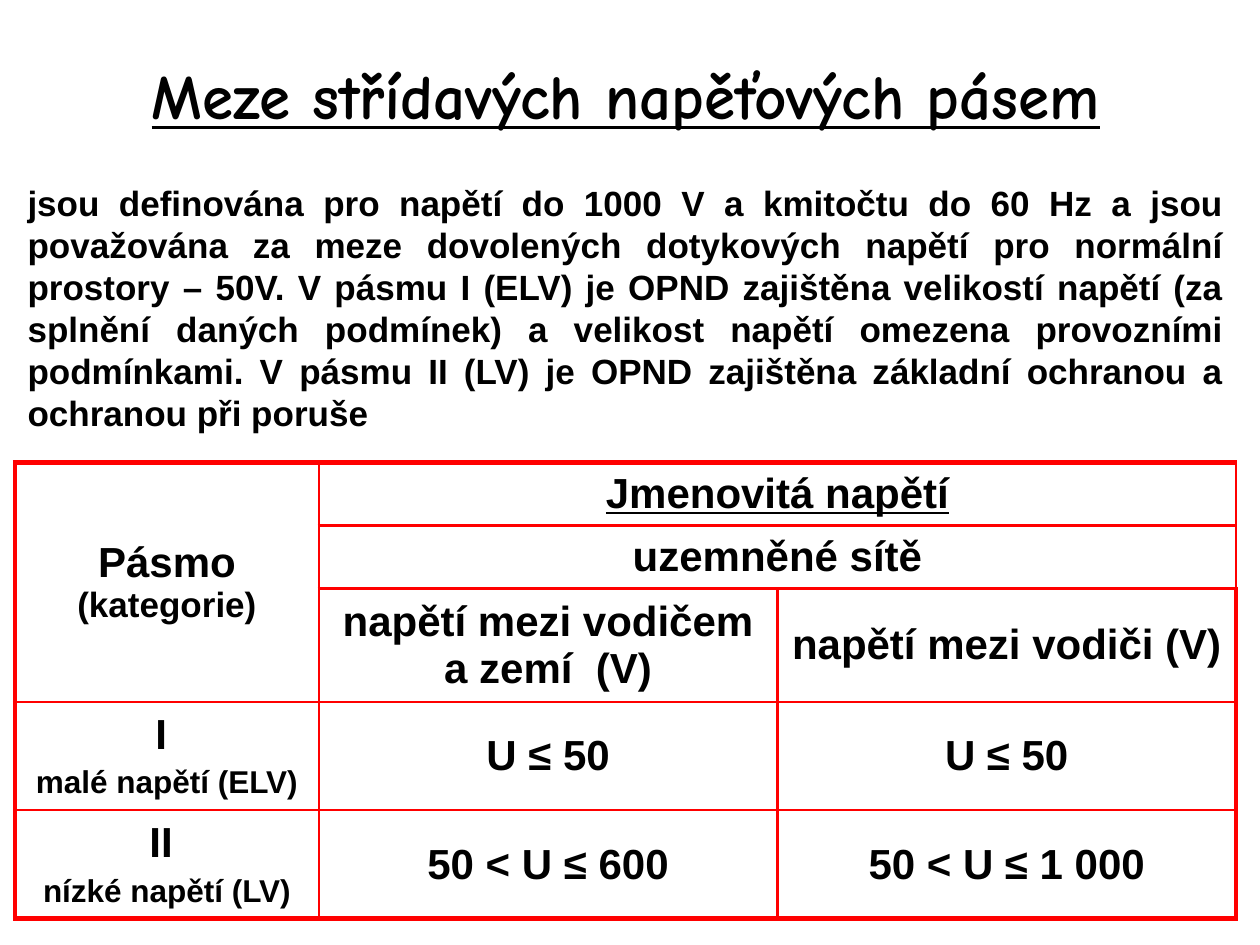
import pptx
import pptx.util
import pptx.dml.color
import pptx.enum.text
import pptx.oxml
import pptx.oxml.ns

Inches, Pt = pptx.util.Inches, pptx.util.Pt
RGBColor = pptx.dml.color.RGBColor
ALIGN = pptx.enum.text.PP_ALIGN
ANCHOR = pptx.enum.text.MSO_ANCHOR

BLACK = RGBColor(0, 0, 0)
WHITE = RGBColor(255, 255, 255)
RED = RGBColor(255, 0, 0)
THIN, THICK = 1.5, 3
LEFT, WIDTH = 0.12, 9.69

TITLE = "Meze střídavých napěťových pásem"
BODY = (
    "jsou definována pro napětí do 1000 V a kmitočtu do 60 Hz a jsou "
    "považována za meze dovolených dotykových napětí pro normální "
    "prostory – 50V. V pásmu I (ELV) je OPND zajištěna velikostí napětí "
    "(za splnění daných podmínek) a velikost napětí omezena provozními "
    "podmínkami. V pásmu II (LV) je OPND zajištěna základní ochranou "
    "a ochranou při poruše "
)
COLS = [2.41, 3.64, 3.64]
ROWS = [0.5, 0.5, 0.9, 0.86, 0.86]

# (row, column): paragraphs, each a list of (text, size) runs
CELLS = {
    (0, 0): [[("Pásmo ", 24), ("(kategorie)", 20)]],
    (0, 1): [[("Jmenovitá napětí", 24)]],
    (1, 1): [[("uzemněné sítě", 24)]],
    (2, 1): [[("napětí mezi vodičem a zemí  (V)", 24)]],
    (2, 2): [[("napětí mezi vodiči (V)", 24)]],
    (3, 0): [[("I ", 24)], [("malé napětí (ELV)", 18)]],
    (3, 1): [[("U ≤ 50", 24)]],
    (3, 2): [[("U ≤ 50", 24)]],
    (4, 0): [[("II ", 24)], [("nízké napětí (LV)", 18)]],
    (4, 1): [[("50 < U ≤ 600", 24)]],
    (4, 2): [[("50 < U ≤ 1 000", 24)]],
}
MERGES = [((0, 0), (2, 0)), ((0, 1), (0, 2)), ((1, 1), (1, 2))]
UNDERLINED = (0, 1)


def add_run(para, text, size, font="Arial", underline=False):
    run = para.add_run()
    run.text = text
    run.font.name = font
    run.font.size = Pt(size)
    run.font.bold = True
    run.font.underline = underline
    run.font.color.rgb = BLACK


def add_borders(cell, row, col):
    """Draw thick lines on the table's rim and thin ones inside."""
    rim = {
        "lnL": col == 0,
        "lnR": col == len(COLS) - 1,
        "lnT": row == 0,
        "lnB": row == len(ROWS) - 1,
    }
    props = cell._tc.get_or_add_tcPr()
    for place, (tag, outer) in enumerate(rim.items()):
        width = Pt(THICK if outer else THIN)
        props.insert(place, pptx.oxml.parse_xml(
            f'<a:{tag} {pptx.oxml.ns.nsdecls("a")} w="{width}">'
            f'<a:solidFill><a:srgbClr val="{RED}"/></a:solidFill></a:{tag}>'))


def add_title(slide):
    title = slide.shapes.title
    title.left, title.top = Inches(LEFT), Inches(0.27)
    title.width, title.height = Inches(WIDTH), Inches(0.96)
    frame = title.text_frame
    frame.vertical_anchor = ANCHOR.MIDDLE
    para = frame.paragraphs[0]
    para.alignment = ALIGN.CENTER
    add_run(para, TITLE, 36, "Comic Neue", True)


def add_body(slide):
    box = slide.shapes.add_textbox(
        Inches(LEFT), Inches(1.39), Inches(WIDTH), Inches(2.12))
    frame = box.text_frame
    frame.word_wrap = True
    frame.auto_size = pptx.enum.text.MSO_AUTO_SIZE.SHAPE_TO_FIT_TEXT
    para = frame.paragraphs[0]
    para.alignment = ALIGN.JUSTIFY
    add_run(para, BODY, 20)


def add_grid(slide):
    table = slide.shapes.add_table(
        len(ROWS), len(COLS), Inches(LEFT), Inches(3.67),
        Inches(sum(COLS)), Inches(sum(ROWS))).table
    table.first_row = table.horz_banding = False
    for col, width in zip(table.columns, COLS):
        col.width = Inches(width)
    for row, height in zip(table.rows, ROWS):
        row.height = Inches(height)
    for start, end in MERGES:
        table.cell(*start).merge(table.cell(*end))
    for row in range(len(ROWS)):
        for col in range(len(COLS)):
            cell = table.cell(row, col)
            cell.fill.solid()
            cell.fill.fore_color.rgb = WHITE
            add_borders(cell, row, col)
    for spot, paras in CELLS.items():
        cell = table.cell(*spot)
        cell.vertical_anchor = ANCHOR.MIDDLE
        frame = cell.text_frame
        for place, runs in enumerate(paras):
            para = frame.add_paragraph() if place else frame.paragraphs[0]
            para.alignment = ALIGN.CENTER
            if place:
                para.space_before = Pt(4)
            for text, size in runs:
                add_run(para, text, size, underline=spot == UNDERLINED)


def main():
    deck = pptx.Presentation()
    deck.slide_width, deck.slide_height = Inches(10), Inches(7.5)
    slide = deck.slides.add_slide(deck.slide_layouts[5])
    add_title(slide)
    add_body(slide)
    add_grid(slide)
    deck.save("out.pptx")


if __name__ == "__main__":
    main()
